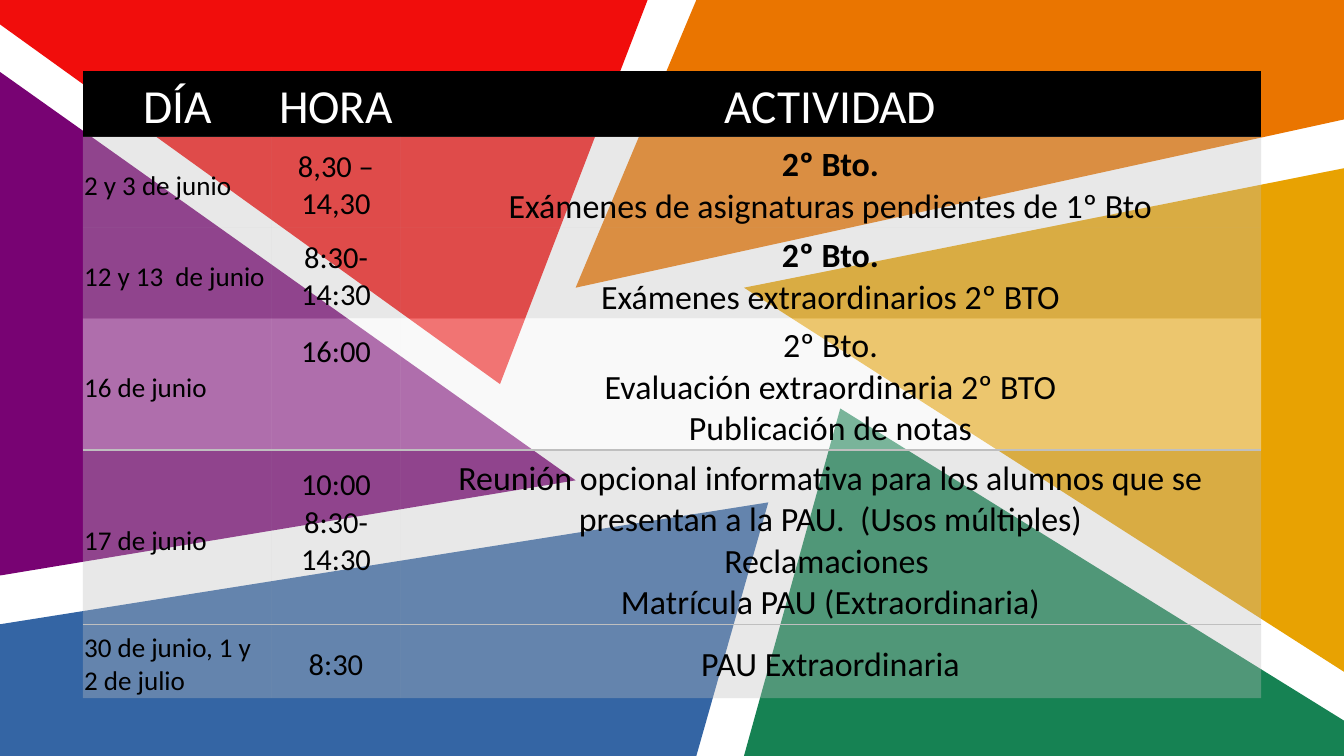
from lxml.etree import SubElement as Sub
from pptx import Presentation
from pptx.dml.color import RGBColor
from pptx.enum.text import MSO_ANCHOR as Anchor, PP_ALIGN as Align
from pptx.oxml import parse_xml
from pptx.oxml.ns import nsdecls, qn
from pptx.util import Inches, Pt

SHARDS = [
    ("F10D0C", [(0, 0), (0, 0.2), (4.1, 3.15), (5.31, 0)]),
    ("EA7500", [(11.02, 0), (5.71, 0), (4.72, 2.36), (11.02, 0.98)]),
    ("E8A202", [(11.02, 5.51), (11.02, 1.38), (6.1, 2.36)]),
    ("168253", [(11.02, 6.2), (11.02, 5.91), (6.89, 3.35), (6.1, 6.2)]),
    ("3465A4", [(0, 6.2), (5.71, 6.2), (6.3, 4.12), (0, 5.12)]),
    ("780373", [(0, 0.59), (0, 4.72), (4.72, 3.94)]),
]
COLS = [1.55, 1.05, 7.06]
HEADS = ["DÍA", "HORA", "ACTIVIDAD"]
GREY, PALE = ("BFBFBF", 35), ("F2F2F2", 45)
ROWS = [
    (0.75, GREY, "", 0, ["2 y 3 de junio"], ["8,30 – 14,30"],
     ["*2º Bto.", "Exámenes de asignaturas pendientes de 1º Bto"]),
    (0.74, GREY, "", 0, ["12 y 13  de junio"], ["8:30-14:30"],
     ["*2º Bto.", "Exámenes extraordinarios 2º BTO"]),
    (1.08, PALE, "B", 0.59, ["16 de junio"], ["16:00"],
     ["2º Bto.", "Evaluación extraordinaria 2º BTO", "Publicación de notas"]),
    (1.43, GREY, "BT", 0.3, ["17 de junio"], ["10:00", "8:30-14:30"],
     ["Reunión opcional informativa para los alumnos que se presentan a la PAU.  (Usos múltiples)",
      "Reclamaciones ", "Matrícula PAU (Extraordinaria)"]),
    (0.6, GREY, "T", 0, ["30 de junio, 1 y 2 de julio"], ["8:30"],
     ["PAU Extraordinaria"]),
]


def color(code):
    """Turn a hex string into a colour."""
    return RGBColor.from_string(code)


def write(frame, lines, size=20, ink="000000", font="Calibri", align=Align.CENTER):
    """Fill a text frame, one paragraph a line; a leading star means bold."""
    for i, line in enumerate(lines):
        para = frame.add_paragraph() if i else frame.paragraphs[0]
        para.alignment = align
        run = para.add_run()
        run.text = line.lstrip("*")
        run.font.name, run.font.size = font, Pt(size)
        run.font.bold = line.startswith("*")
        run.font.color.rgb = color(ink)


class Board:
    """Hold the style and the slide being drawn."""

    rule = "BFBFBF"
    plain = "{2D5ABB26-0587-4C30-8999-92F81FD0307C}"

    def __init__(self, deck):
        """Add a blank slide to the deck."""
        self.slide = deck.slides.add_slide(deck.slide_layouts[6])

    def shard(self, fill, points):
        """Draw a closed flat polygon."""
        dots = [(Inches(x), Inches(y)) for x, y in points]
        pen = self.slide.shapes.build_freeform(*dots[0])
        pen.add_line_segments(dots[1:], close=True)
        shape = pen.convert_to_shape()
        shape.shadow.inherit = False
        shape.fill.solid()
        shape.fill.fore_color.rgb = color(fill)
        shape.line.fill.background()

    def grid(self, left, top, cols, rows):
        """Add an unstyled table with the given widths and heights."""
        frame = self.slide.shapes.add_table(
            len(rows), len(cols), Inches(left), Inches(top),
            Inches(sum(cols)), Inches(sum(rows)))
        table = frame.table
        table.horz_banding = False
        next(frame._element.iter(qn("a:tableStyleId"))).text = self.plain
        for col, width in zip(table.columns, cols):
            col.width = Inches(width)
        for row, height in zip(table.rows, rows):
            row.height = Inches(height)
        return table

    def cell(self, cell, lines, fill, alpha=100, edges="", foot=0, **style):
        """Set the fill, edges, margins and text of a cell."""
        cell.vertical_anchor = Anchor.MIDDLE
        cell.margin_left = cell.margin_right = Inches(0.01)
        cell.margin_top, cell.margin_bottom = Inches(0.06), Inches(foot)
        cell.fill.solid()
        cell.fill.fore_color.rgb = color(fill)
        props = cell._tc.tcPr
        if alpha < 100:
            tint = next(props.iter(qn("a:srgbClr")))
            Sub(tint, qn("a:alpha"), val=str(alpha * 1000))
        for edge in edges:
            props.insert(0, parse_xml(
                f'<a:ln{edge} {nsdecls("a")} w="{Pt(1)}"><a:solidFill>'
                f'<a:srgbClr val="{self.rule}"/></a:solidFill></a:ln{edge}>'))
        write(cell.text_frame, lines, **style)


def main():
    """Build the exam calendar."""
    deck = Presentation()
    deck.slide_width, deck.slide_height = Inches(11.02), Inches(6.2)
    board = Board(deck)
    for fill, points in SHARDS:
        board.shard(fill, points)
    table = board.grid(0.68, 0.58, COLS, [0.54] + [row[0] for row in ROWS])
    for c, head in enumerate(HEADS):
        board.cell(table.cell(0, c), [head], "000000", size=28, ink="FFFFFF")
    for r, (_, (fill, alpha), edges, foot, day, hour, task) in enumerate(ROWS, 1):
        look = dict(fill=fill, alpha=alpha, edges=edges)
        board.cell(table.cell(r, 0), day, size=16, align=Align.LEFT, **look)
        board.cell(table.cell(r, 1), hour, size=18, foot=foot, **look)
        board.cell(table.cell(r, 2), task, **look)
    deck.save("out.pptx")


if __name__ == "__main__":
    main()
